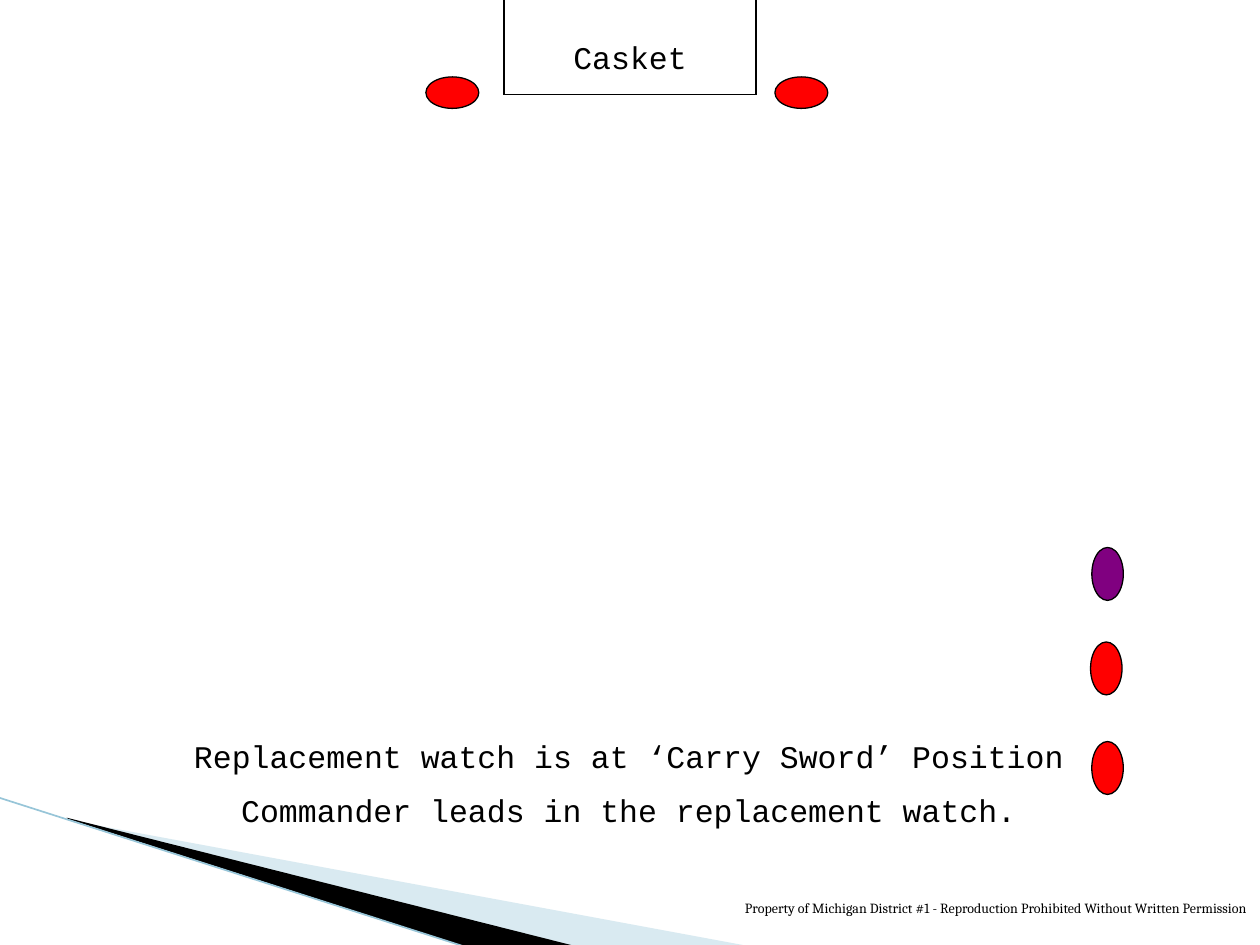
from lxml import etree
from pptx import Presentation
from pptx.dml.color import RGBColor
from pptx.enum.shapes import MSO_CONNECTOR, MSO_SHAPE
from pptx.enum.text import PP_ALIGN
from pptx.oxml.ns import qn
from pptx.util import Inches, Pt

STRAIGHT = MSO_CONNECTOR.STRAIGHT
OVAL = MSO_SHAPE.OVAL
CENTER, RIGHT = PP_ALIGN.CENTER, PP_ALIGN.RIGHT
WIDTH, HEIGHT = 10, 7.5
GUARD_LENGTH, GUARD_DEPTH = 0.42, 0.25
BLACK, RED, PURPLE = "000000", "FF0000", "800080"


def rgb(value):
    """Turn a hex string into a colour."""
    return RGBColor.from_string(value)


def add_line(slide, start, end, color=BLACK, weight=0.75):
    """Draw a straight line without shadow between two points."""
    line = slide.shapes.add_connector(
        STRAIGHT, *(Inches(value) for value in (*start, *end)))
    line.line.color.rgb = rgb(color)
    line.line.width = Pt(weight)
    etree.SubElement(line._element.spPr, qn("a:effectLst"))


def add_wedge(slide, points, color, opacity=100):
    """Fill an outline given in inches, optionally see-through."""
    corners = [(Inches(x), Inches(y)) for x, y in points]
    builder = slide.shapes.build_freeform(*corners[0])
    builder.add_line_segments(corners[1:], close=True)
    wedge = builder.convert_to_shape()
    wedge.shadow.inherit = False
    wedge.fill.solid()
    wedge.fill.fore_color.rgb = rgb(color)
    wedge.line.fill.background()
    if opacity < 100:
        tint = wedge._element.spPr.find(qn("a:solidFill"))[0]
        etree.SubElement(tint, qn("a:alpha"), val=str(opacity * 1000))


def add_text(slide, box, lines, font, size, alignment):
    """Place aligned paragraphs in a box."""
    frame = slide.shapes.add_textbox(*(Inches(value) for value in box)).text_frame
    frame.word_wrap = True
    frame.text = "\n".join(lines)
    for index, paragraph in enumerate(frame.paragraphs):
        paragraph.alignment = alignment
        if index:
            paragraph.space_before = Pt(size / 2)
        for run in paragraph.runs:
            run.font.name = font
            run.font.size = Pt(size)
            run.font.color.rgb = rgb(BLACK)


def add_guard(slide, left, top, color, rotation):
    """Stand one guard, turned to the way it faces."""
    guard = slide.shapes.add_shape(
        OVAL, Inches(left), Inches(top), Inches(GUARD_LENGTH), Inches(GUARD_DEPTH))
    guard.rotation = rotation
    guard.shadow.inherit = False
    guard.fill.solid()
    guard.fill.fore_color.rgb = rgb(color)
    guard.line.color.rgb = rgb(BLACK)
    guard.line.width = Pt(0.75)


def add_corner(slide, left, top):
    """Sweep the decorative wedges across the lower left corner."""
    add_wedge(slide, [(left, top + 0.01), (left + 5.4, HEIGHT + 0.01),
                      (left + 4.01, HEIGHT + 0.01), (left, top)], "A0CBDC", 40)
    add_wedge(slide, [(left - 0.02, top - 0.01), (left + 4.02, HEIGHT + 0.01),
                      (left + 3.17, HEIGHT + 0.02), (left - 0.01, top)], BLACK)
    add_line(slide, (-0.01, top - 0.17), (3.71, HEIGHT + 0.02), "97C5D8", 0.95)


def add_casket(slide, left, width, bottom):
    """Outline the casket, label it and post a guard on each side."""
    right = left + width
    add_line(slide, (left, bottom), (right, bottom))
    for side in (left, right):
        add_line(slide, (side, bottom), (side, 0))
    add_text(slide, (left + 0.29, bottom - 0.5, width - 0.58, 0.4),
             ["Casket"], "Courier New", 18, CENTER)
    for post in (left - 0.62, right + 0.15):
        add_guard(slide, post, bottom - 0.14, RED, 180)


def add_replacement_watch(slide, left, top):
    """Line up the commander and the replacement watch in a file."""
    for shift, drop, color, rotation in (
            (0.01, 0, PURPLE, 90), (0, 0.75, RED, 270), (0.01, 1.54, RED, 270)):
        add_guard(slide, left + shift, top + drop, color, rotation)


def main():
    """Build and save the slide."""
    deck = Presentation()
    deck.slide_width, deck.slide_height = Inches(WIDTH), Inches(HEIGHT)
    slide = deck.slides.add_slide(deck.slide_layouts[6])
    add_corner(slide, 0.55, 6.5)
    add_casket(slide, WIDTH * 0.4, WIDTH * 0.2, HEIGHT * 0.1)
    add_replacement_watch(slide, 8.57, 4.43)
    add_text(slide, (0.99, 5.8, WIDTH * 0.8, 0.85),
             ["Replacement watch is at ‘Carry Sword’ Position",
              "Commander leads in the replacement watch."],
             "Courier New", 18, CENTER)
    add_text(slide, (4.42, 7.09, WIDTH - 4.42, 0.26),
             ["Property of Michigan District #1 - "
              "Reproduction Prohibited Without Written Permission"],
             "Cambria", 8, RIGHT)
    deck.save("out.pptx")


if __name__ == "__main__":
    main()
